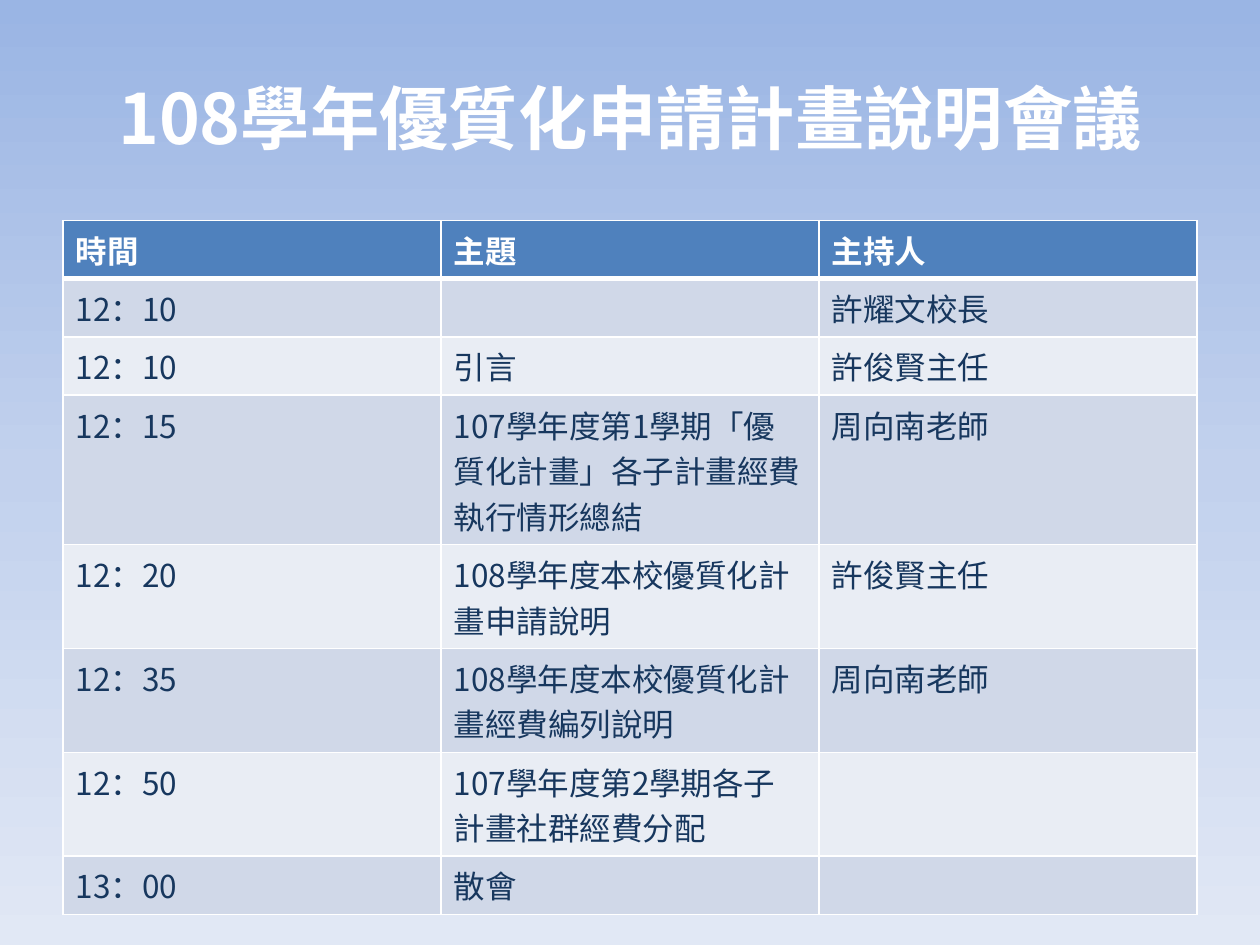
import copy
from dataclasses import dataclass

import pptx
import pptx.dml.color
import pptx.enum.text
import pptx.oxml
import pptx.oxml.ns
import pptx.util

Inches = pptx.util.Inches
CJK_FONT = "Noto Sans CJK SC"
WHITE = "FFFFFF"
GRADIENT = [(0, "9AB5E4"), (0.5, "C2D1ED"), (1, "E1E8F5")]
HEADINGS = ["時間", "主題", "主持人"]
HEADER_FILL = "4F81BD"
BODY_FILLS = ["D0D8E8", "E9EDF4"]
BODY_TEXT = "17375E"


@dataclass
class Session:
    time: str
    topic: str = ""
    host: str = ""


SESSIONS = [
    Session("12：10", host="許耀文校長"),
    Session("12：10", "引言", "許俊賢主任"),
    Session("12：15", "107學年度第1學期「優質化計畫」各子計畫經費執行情形總結", "周向南老師"),
    Session("12：20", "108學年度本校優質化計畫申請說明", "許俊賢主任"),
    Session("12：35", "108學年度本校優質化計畫經費編列說明", "周向南老師"),
    Session("12：50", "107學年度第2學期各子計畫社群經費分配"),
    Session("13：00", "散會"),
]


def rgb(value: str) -> pptx.dml.color.RGBColor:
    return pptx.dml.color.RGBColor.from_string(value)


def set_font(para, name: str, size: float, color: str, bold: bool) -> None:
    font = para.font
    font.name, font.size, font.bold = name, pptx.util.Pt(size), bold
    font.color.rgb = rgb(color)
    # East Asian characters take their own typeface
    east_asian = pptx.oxml.parse_xml(
        f'<a:ea {pptx.oxml.ns.nsdecls("a")} typeface="{CJK_FONT}"/>')
    para._p.pPr.find(pptx.oxml.ns.qn("a:defRPr")).append(east_asian)


def paint_background(page) -> None:
    fill = page.background.fill
    fill.gradient()
    fill.gradient_angle = 270
    first = fill.gradient_stops[0]._gs
    first.addnext(copy.deepcopy(first))
    for stop, (position, color) in zip(fill.gradient_stops, GRADIENT):
        stop.position = position
        stop.color.rgb = rgb(color)


def set_borders(cell, bottom: float) -> None:
    widths = {"lnL": 1, "lnR": 1, "lnT": 1, "lnB": bottom}
    for index, (side, width) in enumerate(widths.items()):
        line = pptx.oxml.parse_xml(
            f'<a:{side} {pptx.oxml.ns.nsdecls("a")} w="{pptx.util.Pt(width)}">'
            f'<a:solidFill><a:srgbClr val="{WHITE}"/></a:solidFill></a:{side}>')
        cell._tc.get_or_add_tcPr().insert(index, line)


def fill_cell(cell, text: str, row: int) -> None:
    header = row == 0
    cell.text = text
    cell.fill.solid()
    cell.fill.fore_color.rgb = rgb(
        HEADER_FILL if header else BODY_FILLS[(row - 1) % 2])
    set_font(cell.text_frame.paragraphs[0], "Calibri" if header else CJK_FONT,
             18, WHITE if header else BODY_TEXT, header)
    set_borders(cell, 3 if header else 1)


def add_title(page) -> None:
    title = page.shapes.title
    title.left, title.top = Inches(0.5), Inches(0.3)
    title.width, title.height = Inches(9), Inches(1.25)
    frame = title.text_frame
    frame.text = "108學年優質化申請計畫說明會議"
    frame.vertical_anchor = pptx.enum.text.MSO_ANCHOR.MIDDLE
    para = frame.paragraphs[0]
    para.alignment = pptx.enum.text.PP_ALIGN.CENTER
    set_font(para, CJK_FONT, 39.6, WHITE, True)


def add_agenda(page) -> None:
    rows = [HEADINGS] + [[item.time, item.topic, item.host] for item in SESSIONS]
    row_height = Inches(0.41)
    table = page.shapes.add_table(
        len(rows), len(HEADINGS), Inches(0.5), Inches(1.75),
        Inches(9), row_height * len(rows)).table
    for row, texts in enumerate(rows):
        for column, text in enumerate(texts):
            fill_cell(table.cell(row, column), text, row)


def main() -> None:
    deck = pptx.Presentation()
    deck.slide_width, deck.slide_height = Inches(10), Inches(7.5)
    page = deck.slides.add_slide(deck.slide_layouts[5])
    paint_background(page)
    add_title(page)
    add_agenda(page)
    deck.save("out.pptx")


if __name__ == "__main__":
    main()
